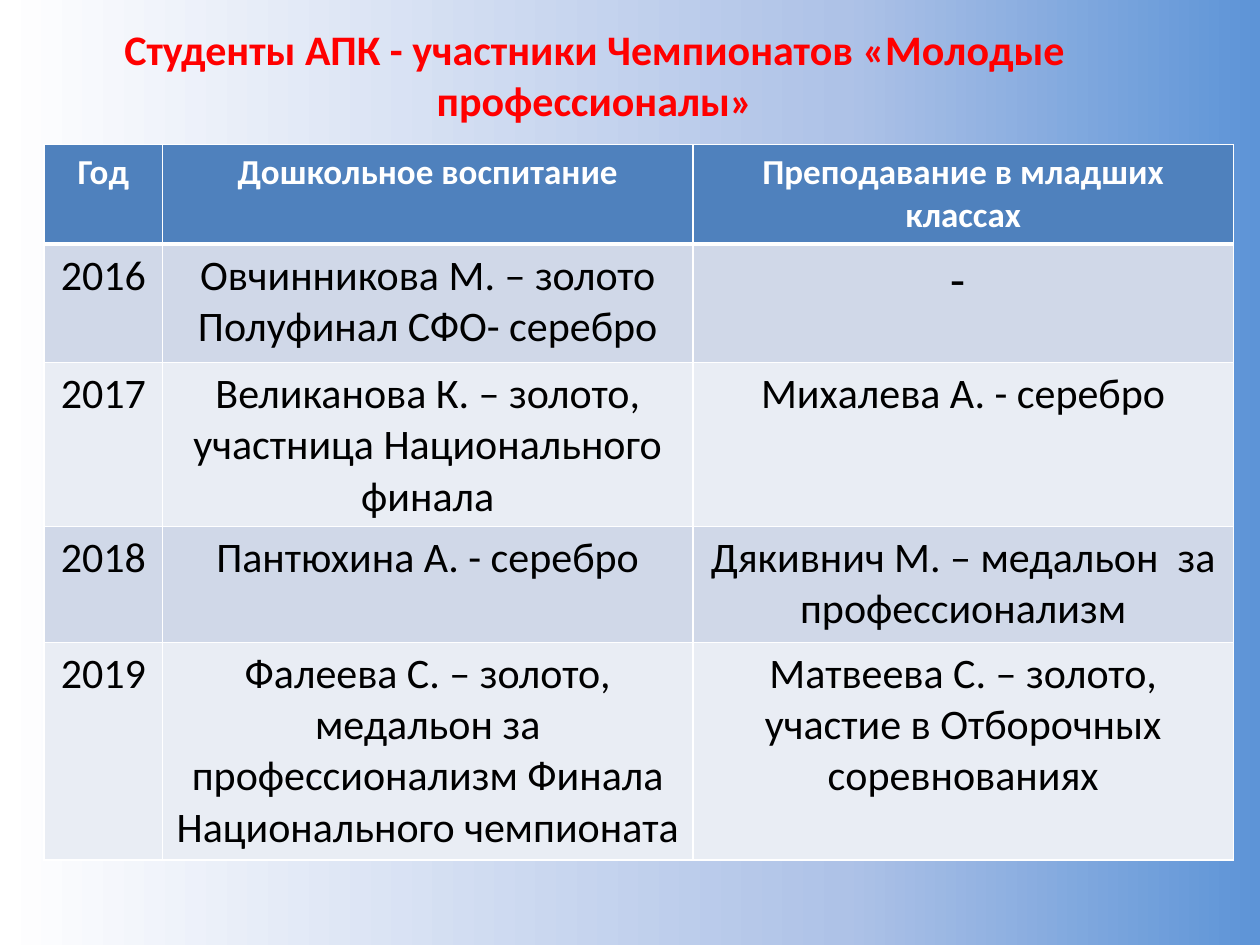
from copy import deepcopy
from dataclasses import dataclass

from lxml import etree
from pptx import Presentation
from pptx.dml.color import RGBColor
from pptx.enum.text import MSO_ANCHOR, PP_ALIGN
from pptx.oxml.ns import qn
from pptx.slide import Slide
from pptx.table import _Cell
from pptx.text.text import TextFrame
from pptx.util import Inches, Pt

CENTER = PP_ALIGN.CENTER
MIDDLE = MSO_ANCHOR.MIDDLE

WHITE = RGBColor(0xFF, 0xFF, 0xFF)
BLACK = RGBColor(0x00, 0x00, 0x00)
RED = RGBColor(0xFF, 0x00, 0x00)
HEADER_BLUE = RGBColor(0x4F, 0x81, 0xBD)
BAND_DARK = RGBColor(0xD0, 0xD8, 0xE8)
BAND_LIGHT = RGBColor(0xE9, 0xED, 0xF4)
SKY_BLUE = RGBColor(0x5D, 0x94, 0xD7)
PALE_BLUE = RGBColor(0xAE, 0xC2, 0xE7)

FONT = "Calibri"
SLIDE_WIDTH = Inches(10)
SLIDE_HEIGHT = Inches(7.5)
COLUMN_WIDTHS = (0.94, 4.21, 4.29)
ROW_HEIGHTS = (0.79, 0.94, 1.25, 0.92, 1.73)
TITLE = "Студенты АПК - участники Чемпионатов «Молодые профессионалы»"
HEADERS = ("Год", "Дошкольное воспитание", "Преподавание в младших классах")


@dataclass(frozen=True)
class TextStyle:
    size: int
    color: RGBColor
    bold: bool = False


@dataclass(frozen=True)
class YearResults:
    year: str
    preschool: str
    primary: str
    primary_size: int = 24


RESULTS = (
    YearResults("2016", "Овчинникова М. – золото\nПолуфинал СФО- серебро", "- ", 28),
    YearResults(
        "2017",
        "Великанова К. – золото, участница Национального финала",
        "Михалева А. - серебро",
    ),
    YearResults(
        "2018",
        "Пантюхина А. - серебро",
        "Дякивнич М. – медальон  за профессионализм",
    ),
    YearResults(
        "2019",
        "Фалеева С. – золото, медальон за профессионализм Финала "
        "Национального чемпионата",
        "Матвеева С. – золото, участие в Отборочных соревнованиях",
    ),
)


def write_text(text_frame: TextFrame, text: str, style: TextStyle) -> None:
    text_frame.text = text
    for paragraph in text_frame.paragraphs:
        paragraph.alignment = CENTER
        for run in paragraph.runs:
            run.font.name = FONT
            run.font.size = Pt(style.size)
            run.font.bold = style.bold
            run.font.color.rgb = style.color


def set_background(slide: Slide) -> None:
    fill = slide.background.fill
    fill.gradient()
    fill.gradient_angle = 180
    first_stop = fill.gradient_stops[0]._gs
    first_stop.addnext(deepcopy(first_stop))
    colors = ((0, SKY_BLUE), (0.33, PALE_BLUE), (1, WHITE))
    for stop, (position, color) in zip(fill.gradient_stops, colors):
        stop.position = position
        stop.color.rgb = color


def add_title(slide: Slide) -> None:
    title = slide.shapes.add_textbox(
        int(SLIDE_WIDTH * 0.022),
        int(SLIDE_HEIGHT * -0.005),
        int(SLIDE_WIDTH * 0.9),
        int(SLIDE_HEIGHT * 0.167),
    )
    title.text_frame.word_wrap = True
    title.text_frame.vertical_anchor = MIDDLE
    write_text(title.text_frame, TITLE, TextStyle(24, RED, True))


def set_borders(cell: _Cell, top: int, bottom: int) -> None:
    properties = cell._tc.get_or_add_tcPr()
    for side, width in (("L", 1), ("R", 1), ("T", top), ("B", bottom)):
        line = etree.SubElement(properties, qn(f"a:ln{side}"), w=str(Pt(width)))
        solid_fill = etree.SubElement(line, qn("a:solidFill"))
        etree.SubElement(solid_fill, qn("a:srgbClr"), val=str(WHITE))


def fill_cell(
    cell: _Cell, text: str, style: TextStyle, color: RGBColor, top: int, bottom: int
) -> None:
    write_text(cell.text_frame, text, style)
    set_borders(cell, top, bottom)
    cell.fill.solid()
    cell.fill.fore_color.rgb = color


def add_results_table(slide: Slide) -> None:
    table = slide.shapes.add_table(
        len(ROW_HEIGHTS),
        len(COLUMN_WIDTHS),
        int(SLIDE_WIDTH * 0.035),
        int(SLIDE_HEIGHT * 0.153),
        Inches(sum(COLUMN_WIDTHS)),
        Inches(sum(ROW_HEIGHTS)),
    ).table
    for column, width in zip(table.columns, COLUMN_WIDTHS):
        column.width = Inches(width)
    for row, height in zip(table.rows, ROW_HEIGHTS):
        row.height = Inches(height)

    header_style = TextStyle(20, WHITE, True)
    for column_index, header in enumerate(HEADERS):
        fill_cell(table.cell(0, column_index), header, header_style, HEADER_BLUE, 1, 3)

    body_style = TextStyle(24, BLACK)
    for row_index, result in enumerate(RESULTS, start=1):
        color = BAND_DARK if row_index % 2 else BAND_LIGHT
        top = 3 if row_index == 1 else 1
        entries = (
            (result.year, body_style),
            (result.preschool, body_style),
            (result.primary, TextStyle(result.primary_size, BLACK)),
        )
        for column_index, (text, style) in enumerate(entries):
            fill_cell(table.cell(row_index, column_index), text, style, color, top, 1)


def main() -> None:
    presentation = Presentation()
    presentation.slide_width = SLIDE_WIDTH
    presentation.slide_height = SLIDE_HEIGHT
    slide = presentation.slides.add_slide(presentation.slide_layouts[6])
    set_background(slide)
    add_title(slide)
    add_results_table(slide)
    presentation.save("out.pptx")


if __name__ == "__main__":
    main()
